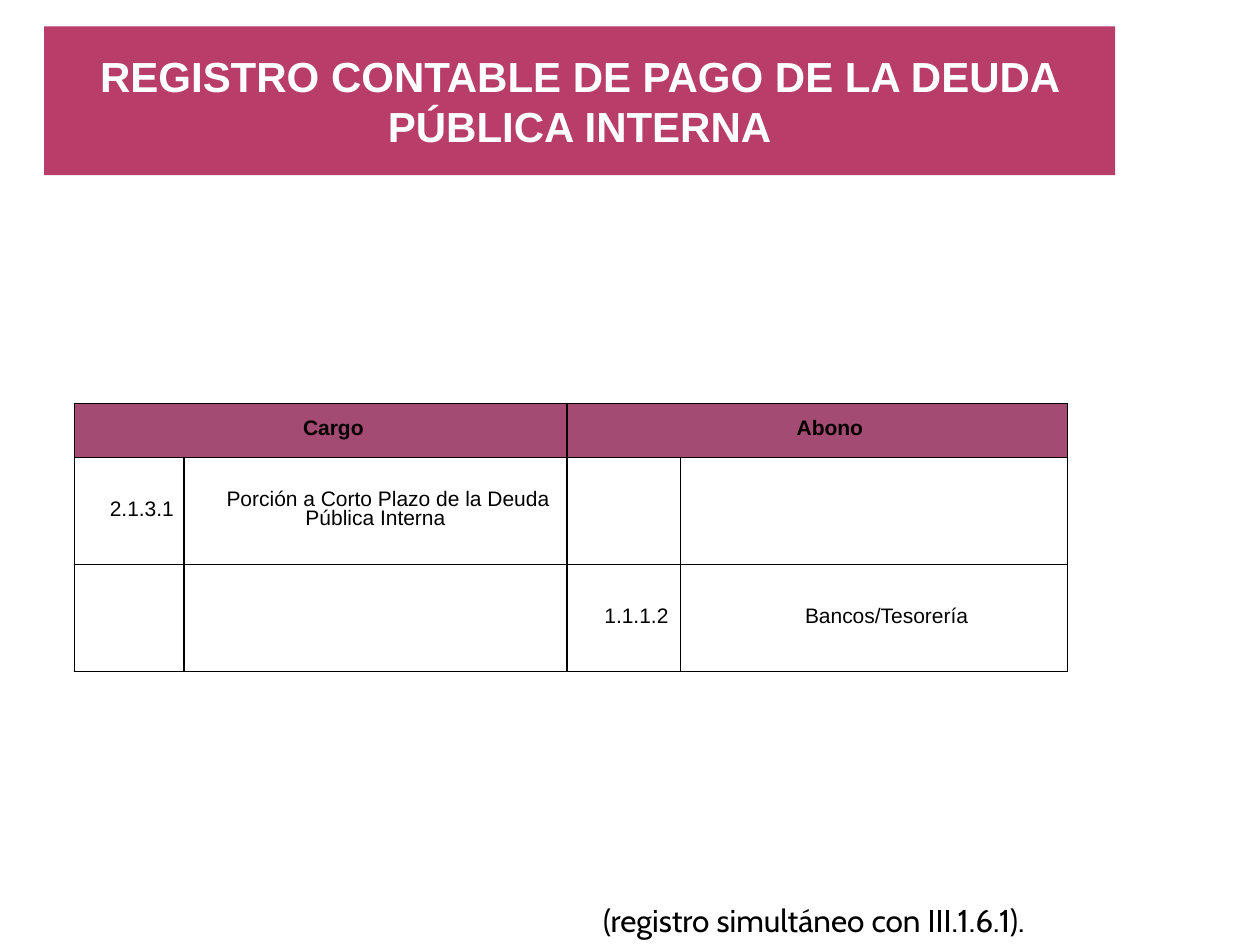
from dataclasses import dataclass

from lxml import etree
from pptx import Presentation
from pptx import util as u
from pptx.dml.color import RGBColor
from pptx.enum import text
from pptx.oxml import ns


@dataclass
class Entry:
    row: int
    col: int
    label: str
    span: int = 1


ENTRIES = [
    Entry(0, 0, "Cargo", 2),
    Entry(0, 2, "Abono", 2),
    Entry(1, 0, "2.1.3.1"),
    Entry(1, 1, "Porción a Corto Plazo de la Deuda Pública Interna"),
    Entry(2, 2, "1.1.1.2"),
    Entry(2, 3, "Bancos/Tesorería"),
]
COLUMNS = [2.21, 7.72, 2.29, 7.8]
ROWS = [1.09, 2.16, 2.16]


def paint(fmt, color: str) -> None:
    fmt.solid()
    fmt.fore_color.rgb = RGBColor.from_string(color)


def write(tf, content: str, *, size: float, font: str = "Arial",
          color: str = "000000", bold: bool = False, align=None):
    p = tf.paragraphs[0]
    p.alignment = align
    r = p.add_run()
    r.text = content
    r.font.name = font
    r.font.size = u.Pt(size)
    r.font.bold = bold
    paint(r.font.fill, color)
    return p


def add_borders(cell, color: str = "000000", width: float = 1) -> None:
    tc_pr = cell._tc.get_or_add_tcPr()
    for side in ("lnL", "lnR", "lnT", "lnB"):
        ln = etree.SubElement(tc_pr, ns.qn(f"a:{side}"), w=str(u.Pt(width)))
        fill = etree.SubElement(ln, ns.qn("a:solidFill"))
        etree.SubElement(fill, ns.qn("a:srgbClr"), val=color)


def fill_entry(table, entry: Entry) -> None:
    cell = table.cell(entry.row, entry.col)
    if entry.span > 1:
        cell.merge(table.cell(entry.row, entry.col + entry.span - 1))
    p = write(cell.text_frame, entry.label, size=12, bold=entry.row == 0,
              align=text.PP_ALIGN.CENTER)
    p.line_spacing = u.Pt(10.8)
    p.space_after = u.Pt(4.1)
    p_pr = p._p.get_or_add_pPr()
    p_pr.set("marL", "0")
    p_pr.set("indent", str(u.Cm(0.51)))


def add_ledger(s) -> None:
    table = s.shapes.add_table(
        len(ROWS), len(COLUMNS), u.Cm(1.5), u.Cm(8.13),
        u.Cm(sum(COLUMNS)), u.Cm(sum(ROWS))).table
    table.first_row = table.horz_banding = False
    for column, width in zip(table.columns, COLUMNS):
        column.width = u.Cm(width)
    for i, (row, height) in enumerate(zip(table.rows, ROWS)):
        row.height = u.Cm(height)
        for cell in row.cells:
            cell.margin_left = cell.margin_right = u.Cm(0.13)
            cell.margin_top = cell.margin_bottom = 0
            cell.vertical_anchor = text.MSO_ANCHOR.MIDDLE
            add_borders(cell)
            if i == 0:
                paint(cell.fill, "A34B73")
            else:
                cell.fill.background()
    for entry in ENTRIES:
        fill_entry(table, entry)


def add_title(s) -> None:
    sp = s.shapes.title
    sp.left, sp.top = u.Cm(0.89), u.Cm(0.53)
    sp.width, sp.height = u.Cm(21.59), u.Cm(3)
    paint(sp.fill, "B83D68")
    tf = sp.text_frame
    tf.auto_size = text.MSO_AUTO_SIZE.NONE
    tf.vertical_anchor = text.MSO_ANCHOR.MIDDLE
    write(tf, "REGISTRO CONTABLE DE PAGO DE LA DEUDA PÚBLICA INTERNA",
          size=24, color="FFFFFF", bold=True, align=text.PP_ALIGN.CENTER)


def add_note(s) -> None:
    sp = s.shapes.add_textbox(u.Cm(11.91), u.Cm(18.03), u.Cm(10.59), u.Cm(1.02))
    tf = sp.text_frame
    tf.word_wrap = True
    tf.auto_size = text.MSO_AUTO_SIZE.SHAPE_TO_FIT_TEXT
    write(tf, "(registro simultáneo con III.1.6.1).", size=18, font="Cabin")


def main() -> None:
    prs = Presentation()
    prs.slide_width, prs.slide_height = u.Cm(25.4), u.Cm(19.05)
    s = prs.slides.add_slide(prs.slide_layouts[5])
    add_ledger(s)
    add_title(s)
    add_note(s)
    prs.save("out.pptx")


if __name__ == "__main__":
    main()
